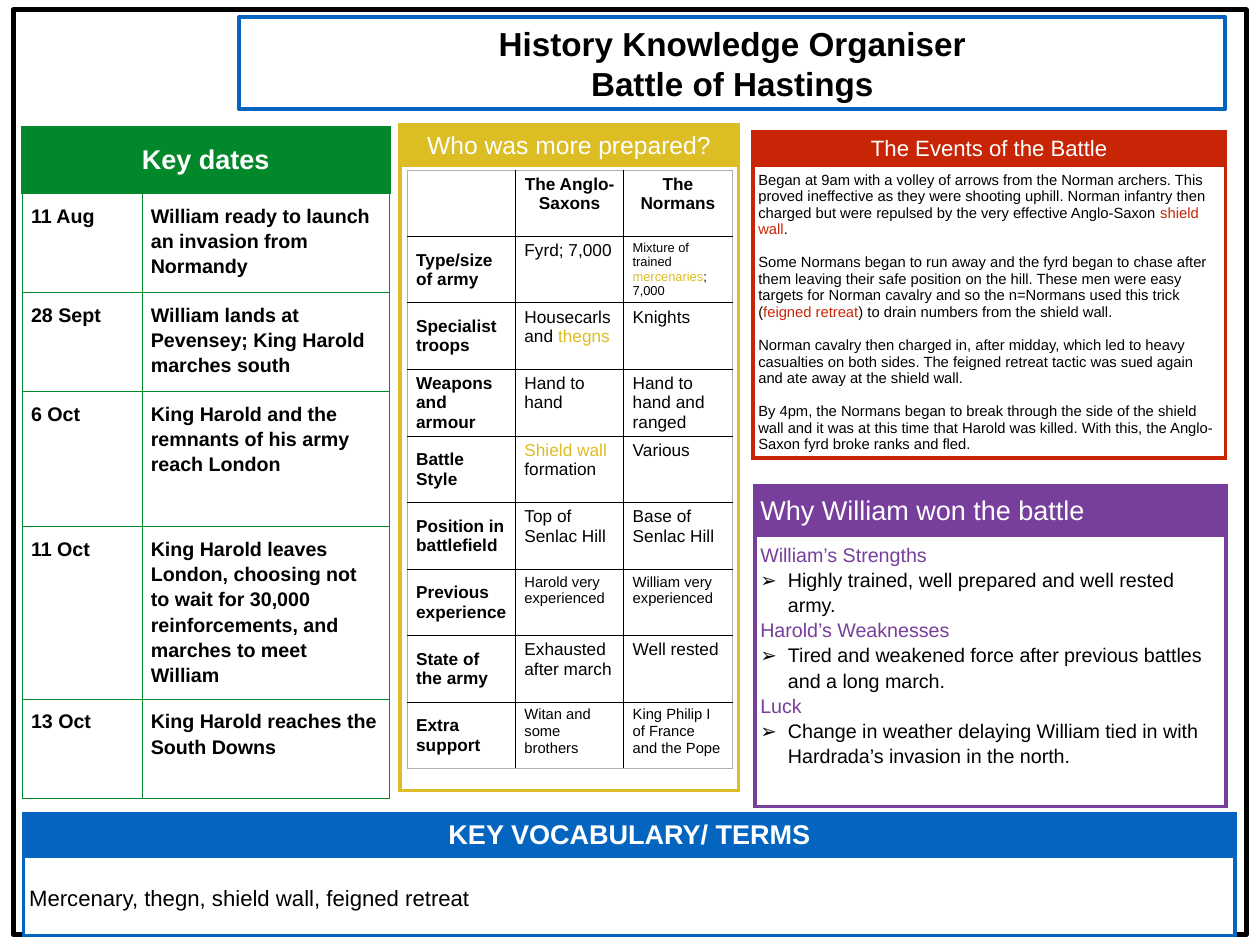
import pptx
import pptx.util
import pptx.dml.color
import pptx.enum.text
import pptx.enum.shapes
import pptx.oxml
import pptx.oxml.ns
import lxml.etree

Pt = pptx.util.Pt
qn = pptx.oxml.ns.qn
ALIGN = pptx.enum.text.PP_ALIGN
ANCHOR = pptx.enum.text.MSO_ANCHOR

COLORS = {"black": "000000", "white": "FFFFFF", "grey": "B0B0B0", "blue": "0365C0",
          "purple": "773F9B", "gold": "DCBD23", "red": "C82506", "green": "00882B"}

# Content: text between | marks is coloured
TITLE = ["History Knowledge Organiser", "Battle of Hastings"]
VOCABULARY = ["Mercenary, thegn, shield wall, feigned retreat"]
EVENTS = [
    "Began at 9am with a volley of arrows from the Norman archers. This proved ineffective as "
    "they were shooting uphill. Norman infantry then charged but were repulsed by the very "
    "effective Anglo-Saxon |shield wall|.",
    "Some Normans began to run away and the fyrd began to chase after them leaving their safe "
    "position on the hill. These men were easy targets for Norman cavalry and so the n=Normans "
    "used this trick (|feigned retreat|) to drain numbers from the shield wall.",
    "Norman cavalry then charged in, after midday, which led to heavy casualties on both sides. "
    "The feigned retreat tactic was sued again and ate away at the shield wall.",
    "By 4pm, the Normans began to break through the side of the shield wall and it was at this "
    "time that Harold was killed. With this, the Anglo-Saxon fyrd broke ranks and fled.",
]
REASONS = [
    "|William’s Strengths|",
    "Highly trained, well prepared and well rested army.",
    "|Harold’s Weaknesses|",
    "Tired and weakened force after previous battles and a long march.",
    "|Luck|",
    "Change in weather delaying William tied in with Hardrada’s invasion in the north.",
]
KEY_DATES = [  # date, event, row height
    ("11 Aug", "William ready to launch an invasion from Normandy", 80.6),
    ("28 Sept", "William lands at Pevensey; King Harold marches south", 80.6),
    ("6 Oct", "King Harold and the remnants of his army reach London", 110),
    ("11 Oct", "King Harold leaves London, choosing not to wait for 30,000 reinforcements, "
               "and marches to meet William", 140),
    ("13 Oct", "King Harold reaches the South Downs", 80.6),
]
ARMIES = [  # label, Anglo-Saxons, Normans, their text sizes
    ("", "The Anglo-Saxons", "The Normans", 14, 14),
    ("Type/size of army", "Fyrd; 7,000", "Mixture of trained |mercenaries|; 7,000", 14, 10.5),
    ("Specialist troops", "Housecarls and |thegns|", "Knights", 14, 14),
    ("Weapons and armour", "Hand to hand", "Hand to hand and ranged", 14, 14),
    ("Battle Style", "|Shield wall |formation", "Various", 14, 14),
    ("Position in battlefield", "Top of Senlac Hill", "Base of Senlac Hill", 14, 14),
    ("Previous experience", "Harold very experienced", "William very experienced", 12, 12),
    ("State of the army", "Exhausted after march", "Well rested", 14, 14),
    ("Extra support", "Witan and some brothers", "King Philip I of France and the Pope", 12, 12),
]
PANELS = {  # colour: heading, size, bold, alignment, left, top, width, row heights
    "blue": ("KEY VOCABULARY/ TERMS", 22, True, ALIGN.CENTER, 19.4, 661, 984.2, (36, 63.4)),
    "purple": ("Why William won the battle", 22, False, ALIGN.LEFT, 613.6, 394.6, 382.8, (41, 219.6)),
    "gold": ("Who was more prepared?", 20, False, ALIGN.CENTER, 325, 101.5, 275, (33.8, 506.9)),
    "red": ("The Events of the Battle", 18, False, ALIGN.CENTER, 612, 106.6, 383.8, (28.5, 236)),
}


def rgb(name):
    return pptx.dml.color.RGBColor.from_string(COLORS[name])


def write(p, text, size, bold=False, color="black", accent="black", align=ALIGN.LEFT, spacing=None):
    p.alignment = align
    if spacing:
        p.line_spacing = spacing
    for i, part in enumerate(text.split("|")):
        if part:
            r = p.add_run()
            r.text = part
            r.font.name, r.font.size, r.font.bold = "Arial", Pt(size), bold
            r.font.color.rgb = rgb(accent if i % 2 else color)


def add_bullet(p, indent):
    pPr = p._p.get_or_add_pPr()
    pPr.set("marL", str(Pt(indent)))
    pPr.set("indent", str(-Pt(indent)))
    bu_color = lxml.etree.SubElement(pPr, qn("a:buClr"))
    lxml.etree.SubElement(bu_color, qn("a:srgbClr"), val=COLORS["black"])
    lxml.etree.SubElement(pPr, qn("a:buFont"), typeface="Arial")
    lxml.etree.SubElement(pPr, qn("a:buChar"), char="➢")


def set_borders(cell, **sides):
    tcPr = cell._tc.get_or_add_tcPr()
    for i, side in enumerate("LRTB"):
        color, width = sides[side]
        ln = lxml.etree.Element(qn("a:ln" + side), w=str(Pt(width)))
        fill = lxml.etree.SubElement(ln, qn("a:solidFill"))
        lxml.etree.SubElement(fill, qn("a:srgbClr"), val=COLORS[color])
        tcPr.insert(i, ln)


def set_fill(cell, color):
    cell.fill.solid()
    cell.fill.fore_color.rgb = rgb(color)


def set_margins(cell, margin):
    cell.margin_left = cell.margin_right = Pt(margin)
    cell.margin_top = cell.margin_bottom = Pt(margin)


def add_grid(s, left, top, widths, heights):
    table = s.shapes.add_table(len(heights), len(widths), Pt(left), Pt(top),
                               Pt(sum(widths)), Pt(sum(heights))).table
    table.first_row = table.horz_banding = False
    for column, width in zip(table.columns, widths):
        column.width = Pt(width)
    for row, height in zip(table.rows, heights):
        row.height = Pt(height)
    return table


def add_panel(s, color):
    heading, size, bold, align, left, top, width, heights = PANELS[color]
    table = add_grid(s, left, top, [width], heights)
    head, body = table.cell(0, 0), table.cell(1, 0)
    thick, thin = (color, 3), (color, 0.75)
    for cell, fill in ((head, color), (body, "white")):
        set_margins(cell, 4.3)
        set_fill(cell, fill)
    set_borders(head, L=thick, R=thick, T=thick, B=thin)
    set_borders(body, L=thick, R=thick, T=thin, B=thick)
    head.vertical_anchor = ANCHOR.MIDDLE
    write(head.text_frame.paragraphs[0], heading, size, bold, "white", align=align)
    return body


def paragraphs(tf, texts):
    for i, text in enumerate(texts):
        yield i, tf.add_paragraph() if i else tf.paragraphs[0], text


prs = pptx.Presentation()
prs.slide_width, prs.slide_height = Pt(1024), Pt(768)
s = prs.slides.add_slide(prs.slide_layouts[5])

# Page frame
frame = s.shapes.add_shape(pptx.enum.shapes.MSO_SHAPE.RECTANGLE, Pt(10.8), Pt(8), Pt(1002), Pt(751.7))
frame.shadow.inherit = False
frame.fill.background()
frame.line.color.rgb, frame.line.width = rgb("black"), Pt(4)

# Title
title = s.shapes.title
title.left, title.top, title.width, title.height = Pt(194.4), Pt(13.7), Pt(801.4), Pt(75)
title.line.color.rgb, title.line.width = rgb("blue"), Pt(3)
tf = title.text_frame
tf.word_wrap, tf.vertical_anchor = True, ANCHOR.MIDDLE
tf.auto_size = pptx.enum.text.MSO_AUTO_SIZE.NONE
set_margins(tf, 4.3)
for i, p, text in paragraphs(tf, TITLE):
    write(p, text, 27, True, align=ALIGN.CENTER)

# Vocabulary
body = add_panel(s, "blue")
body.vertical_anchor = ANCHOR.MIDDLE
for i, p, text in paragraphs(body.text_frame, VOCABULARY):
    write(p, text, 18, spacing=1.15)
    p.space_before = Pt(8)

# Why William won
for i, p, text in paragraphs(add_panel(s, "purple").text_frame, REASONS):
    write(p, text, 16, accent="purple", spacing=1.15)
    if i % 2:
        add_bullet(p, 22.5)

# Events
for i, p, text in paragraphs(add_panel(s, "red").text_frame, EVENTS):
    write(p, text, 12, accent="red")
    if i:
        p.space_before = Pt(13.4)

# Key dates
dates = add_grid(s, 18, 103.7, [97.4, 201], [53.3] + [row[2] for row in KEY_DATES])
dates.cell(0, 0).merge(dates.cell(0, 1))
thick, thin = ("green", 3), ("green", 0.75)
for c in range(2):
    cell = dates.cell(0, c)
    set_fill(cell, "green")
    set_borders(cell, L=thick, R=thick, T=thick, B=thin)
head = dates.cell(0, 0)
head.vertical_anchor = ANCHOR.MIDDLE
write(head.text_frame.paragraphs[0], "Key dates", 22, True, "white", align=ALIGN.CENTER)
for r, row in enumerate(KEY_DATES, 1):
    for c in range(2):
        cell = dates.cell(r, c)
        set_margins(cell, 7.2)
        set_fill(cell, "white")
        set_borders(cell, L=thin, R=thin, T=thin, B=thin)
        write(cell.text_frame.paragraphs[0], row[c], 16, True, spacing=1.15)

# Comparison of the armies
add_panel(s, "gold")
armies = add_grid(s, 331, 138.2, [88] * 3, [54] * len(ARMIES))
inner, outer = ("black", 1), ("grey", 1)
for r, (*texts, saxon_size, norman_size) in enumerate(ARMIES):
    for c, (text, size) in enumerate(zip(texts, (14, saxon_size, norman_size))):
        cell = armies.cell(r, c)
        cell.fill.background()
        set_borders(cell, L=inner if c else outer, R=inner if c < 2 else outer,
                    T=inner if r else outer, B=inner if r < len(ARMIES) - 1 else outer)
        if c == 0:
            cell.vertical_anchor = ANCHOR.MIDDLE
        write(cell.text_frame.paragraphs[0], text, size, r == 0 or c == 0, accent="gold",
              align=ALIGN.LEFT if r else ALIGN.CENTER)

prs.save("out.pptx")
